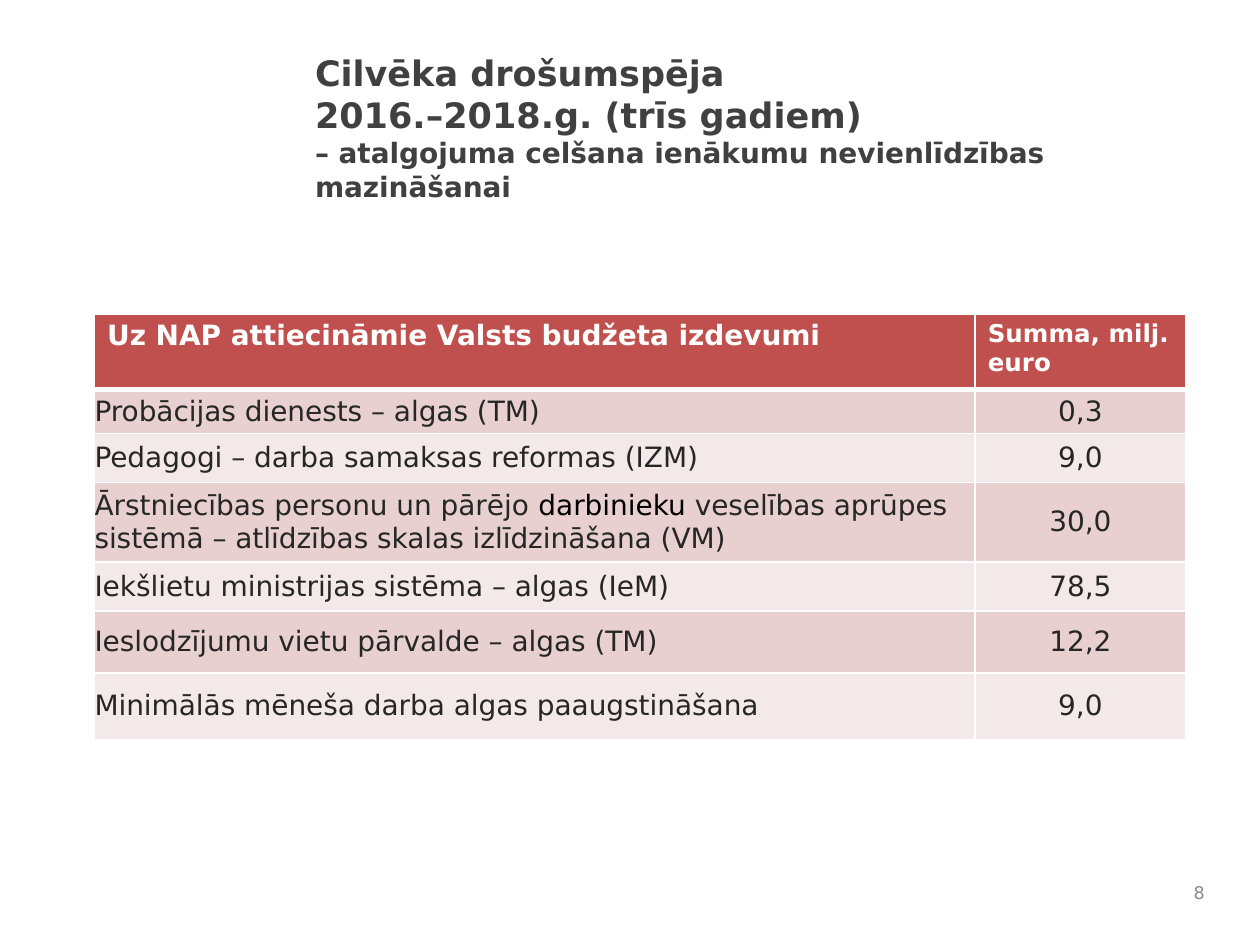
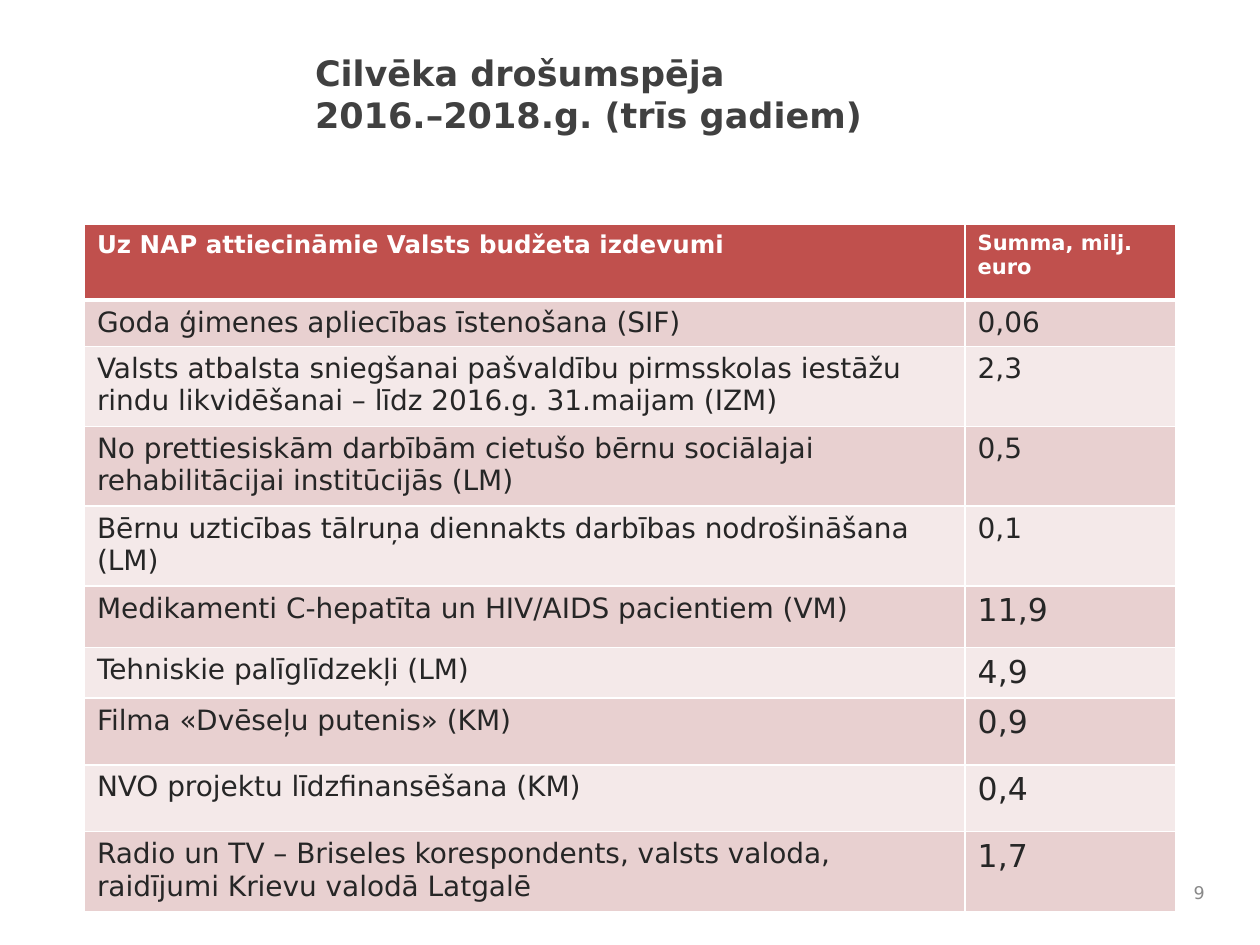
import pptx
import pptx.dml.color
import pptx.enum.text
import pptx.util
from lxml import etree
from pptx.oxml.ns import qn

Inches = pptx.util.Inches
Pt = pptx.util.Pt
PP_ALIGN = pptx.enum.text.PP_ALIGN
MSO_ANCHOR = pptx.enum.text.MSO_ANCHOR

FONT = "DejaVu Sans"
COLOURS = {
    "title": "404040",
    "number": "898989",
    "header": "C0504D",
    "odd_row": "E8D0D0",
    "even_row": "F4E9E9",
    "white": "FFFFFF",
    "text": "262626",
    "black": "000000",
}
TITLE_LINES = [("Cilvēka drošumspēja", 20), ("2016.–2018.g. (trīs gadiem)", 20)]
COLUMN_WIDTHS = (6.99, 1.67)

PAY_ROWS = [
    ("Probācijas dienests – algas (TM)", "0,3", 0.35),
    ("Pedagogi – darba samaksas reformas (IZM)", "9,0", 0.39),
    ([("Ārstniecības personu un pārējo ", "text"),
      ("darbinieku", "black"),
      (" veselības aprūpes sistēmā – atlīdzības skalas izlīdzināšana (VM)", "text")],
     "30,0", 0.63),
    ("Iekšlietu ministrijas sistēma – algas (IeM)", "78,5", 0.39),
    ("Ieslodzījumu vietu pārvalde – algas (TM)", "12,2", 0.49),
    ("Minimālās mēneša darba algas paaugstināšana", "9,0", 0.53),
]
SUPPORT_ROWS = [
    ("Goda ģimenes apliecības īstenošana (SIF)", "0,06", 0.37),
    ("Valsts atbalsta sniegšanai pašvaldību pirmsskolas iestāžu rindu "
     "likvidēšanai – līdz 2016.g. 31.maijam (IZM)", "2,3", 0.63),
    ("No prettiesiskām darbībām cietušo bērnu sociālajai rehabilitācijai "
     "institūcijās (LM)", "0,5", 0.63),
    ("Bērnu uzticības tālruņa diennakts darbības nodrošināšana (LM)", "0,1", 0.63),
    ("Medikamenti C-hepatīta un HIV/AIDS pacientiem (VM)", "11,9", 0.49),
    ("Tehniskie palīglīdzekļi (LM)", "4,9", 0.4),
    ("Filma «Dvēseļu putenis» (KM)", "0,9", 0.53),
    ("NVO projektu līdzfinansēšana (KM)", "0,4", 0.53),
    ("Radio un TV – Briseles korespondents, valsts valoda, raidījumi "
     "Krievu valodā Latgalē", "1,7", 0.63),
]


def rgb(name):
    """Return the named colour."""
    return pptx.dml.color.RGBColor.from_string(COLOURS[name])


def add_span(para, text, size, colour, bold=False):
    """Add one formatted run to a paragraph."""
    span = para.add_run()
    span.text = text
    span.font.name = FONT
    span.font.size = Pt(size)
    span.font.bold = bold
    span.font.color.rgb = rgb(colour)


def add_title(page, box, lines):
    """Fill the title placeholder with one paragraph per line."""
    title = page.shapes.title
    title.left, title.top, title.width, title.height = map(Inches, box)
    frame = title.text_frame
    frame.word_wrap = True
    frame.auto_size = pptx.enum.text.MSO_AUTO_SIZE.NONE
    frame.vertical_anchor = MSO_ANCHOR.TOP
    for index, (text, size) in enumerate(lines):
        para = frame.add_paragraph() if index else frame.paragraphs[0]
        para.alignment = PP_ALIGN.LEFT
        add_span(para, text, size, "title", bold=True)


def add_page_number(page, box, number):
    """Place the page number in the lower right corner."""
    frame = page.shapes.add_textbox(*map(Inches, box)).text_frame
    frame.word_wrap = True
    frame.vertical_anchor = MSO_ANCHOR.MIDDLE
    para = frame.paragraphs[0]
    para.alignment = PP_ALIGN.RIGHT
    add_span(para, str(number), 10, "number")


def set_borders(cell, top, bottom):
    """Draw white borders around a cell with the given line widths."""
    properties = cell._tc.get_or_add_tcPr()
    for side, width in (("L", 1), ("R", 1), ("T", top), ("B", bottom)):
        line = etree.SubElement(properties, qn(f"a:ln{side}"), w=str(Pt(width)))
        fill = etree.SubElement(line, qn("a:solidFill"))
        etree.SubElement(fill, qn("a:srgbClr"), val=COLOURS["white"])


def fill_cell(cell, spans, size, row, centred=False, tight=False):
    """Style one cell by its row and write its text."""
    set_borders(cell, top=3 if row == 1 else 1, bottom=1 if row else 3)
    cell.fill.solid()
    band = "odd_row" if row % 2 else "even_row"
    cell.fill.fore_color.rgb = rgb(band if row else "header")
    if tight:
        cell.margin_left = cell.margin_right = cell.margin_top = cell.margin_bottom = 0
        cell.vertical_anchor = MSO_ANCHOR.MIDDLE
    para = cell.text_frame.paragraphs[0]
    para.alignment = PP_ALIGN.CENTER if centred else PP_ALIGN.LEFT
    for text, colour in spans:
        add_span(para, text, size, colour, bold=row == 0)


def add_budget_table(page, left, top, rows, header_sizes, tight=False, large_from=None):
    """Add the expense table; sums grow larger from the given row on."""
    height = 0.6 + sum(row[2] for row in rows)
    box = map(Inches, (left, top, sum(COLUMN_WIDTHS), height))
    table = page.shapes.add_table(len(rows) + 1, 2, *box).table
    for column, width in zip(table.columns, COLUMN_WIDTHS):
        column.width = Inches(width)
    table.rows[0].height = Inches(0.6)
    headings = ("Uz NAP attiecināmie Valsts budžeta izdevumi", "Summa, milj. euro")
    for column, (heading, size) in enumerate(zip(headings, header_sizes)):
        fill_cell(table.cell(0, column), [(heading, "white")], size, 0)
    for row, (expense, amount, row_height) in enumerate(rows, 1):
        table.rows[row].height = Inches(row_height)
        spans = [(expense, "text")] if isinstance(expense, str) else expense
        fill_cell(table.cell(row, 0), spans, 16, row, tight=tight)
        size = 18 if large_from and row >= large_from else 16
        fill_cell(table.cell(row, 1), [(amount, "text")], size, row, tight, tight)


def add_page(deck, number, title_box, lines):
    """Add a page with its number and title."""
    page = deck.slides.add_slide(deck.slide_layouts[5])
    add_page_number(page, (9.33, 6.92, 0.33, 0.33), number)
    add_title(page, title_box, lines)
    return page


def main():
    """Build the two budget pages."""
    deck = pptx.Presentation()
    deck.slide_width, deck.slide_height = Inches(10), Inches(7.5)

    subtitle = ("– atalgojuma celšana ienākumu nevienlīdzības mazināšanai", 16)
    pay = add_page(deck, 8, (2.4, 0.36, 7.17, 1.31), TITLE_LINES + [subtitle])
    add_budget_table(pay, 0.75, 2.49, PAY_ROWS, (16, 14), tight=True)

    support = add_page(deck, 9, (2.4, 0.36, 6.69, 0.77), TITLE_LINES)
    add_budget_table(support, 0.67, 1.78, SUPPORT_ROWS, (14, 12), large_from=5)

    deck.save("out.pptx")


if __name__ == "__main__":
    main()
